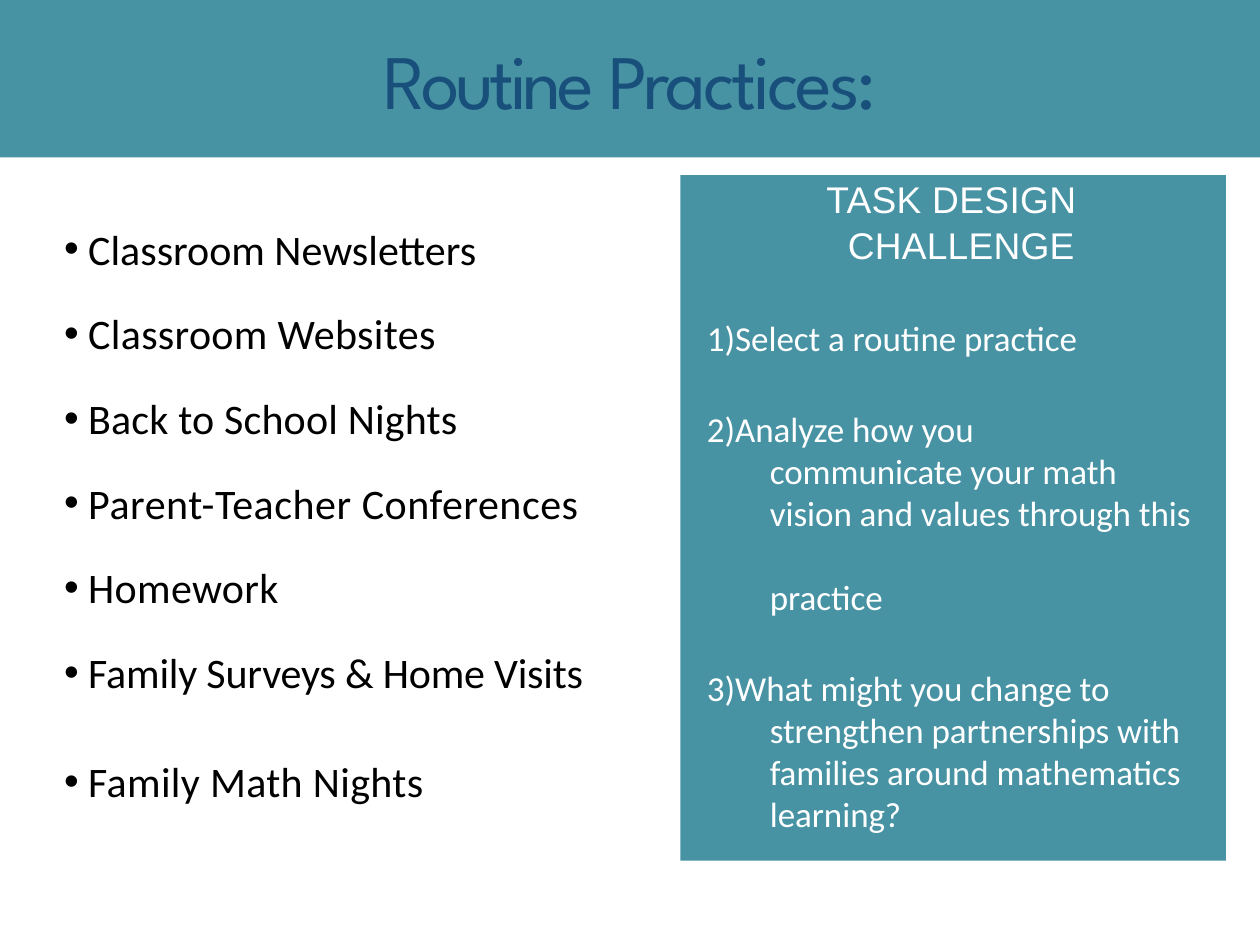
import pptx
import pptx.util
import pptx.dml.color
import pptx.enum.shapes
import pptx.enum.text
import pptx.oxml.ns
import lxml.etree

Pt = pptx.util.Pt
align = pptx.enum.text.PP_ALIGN
anchor = pptx.enum.text.MSO_ANCHOR

theme = {
    "teal": "4793A4",
    "title": {"font": "League Spartan", "size": 44, "color": "18507B"},
    "practice": {"font": "Calibri", "size": 24, "color": "000000"},
    "task": {"font": "Calibri", "size": 20, "color": "FFFFFF"},
    "heading": {"font": "Arial", "size": 21.2, "color": "FFFFFF"},
}

deck = pptx.Presentation()
deck.slide_width = pptx.util.Inches(10)
deck.slide_height = pptx.util.Inches(7.5)
column = deck.slide_width / 100
row = deck.slide_height / 75
page = deck.slides.add_slide(deck.slide_layouts[3])


def place(box, left, top, width, height, frame_format):
    lengths = {"left": left * column, "top": top * row,
               "width": width * column, "height": height * row}
    for name, value in lengths.items():
        setattr(box, name, int(value))
    for name, value in frame_format.items():
        setattr(box.text_frame, name, value)


def write(para, runs, style, para_format, indents=None, bullet=None):
    for name, value in para_format.items():
        setattr(para, name, value)
    properties = para._p.get_or_add_pPr()
    for name, columns in (indents or {}).items():
        properties.set(name, str(int(columns * column)))
    for tag, attributes in (bullet or {"buNone": {}}).items():
        lxml.etree.SubElement(properties, pptx.oxml.ns.qn("a:" + tag), attributes)
    for text, spacing in runs:
        span = para.add_run()
        span.text = text
        font_format = {"name": style["font"], "size": Pt(style["size"])}
        for name, value in font_format.items():
            setattr(span.font, name, value)
        span.font.color.rgb = pptx.dml.color.RGBColor.from_string(style["color"])
        span._r.get_or_add_rPr().set("spc", str(round(spacing * 100)))


flush = {"margin_left": 0, "margin_right": 0, "margin_top": 0, "margin_bottom": 0,
         "word_wrap": True, "vertical_anchor": anchor.TOP,
         "auto_size": pptx.enum.text.MSO_AUTO_SIZE.NONE}

title, practices, tasks = page.placeholders
panel = page.shapes.add_shape(pptx.enum.shapes.MSO_SHAPE.RECTANGLE, 0, 0, 0, 0)
panel.shadow.inherit = False
panel.line.fill.background()
page.shapes._spTree.insert(2, panel._element)
place(panel, 54, 13.9, 43.3, 54.4, {})
for box in (panel, title):
    box.fill.solid()
    box.fill.fore_color.rgb = pptx.dml.color.RGBColor.from_string(theme["teal"])

place(title, 0, 0, 100, 12.5, {"vertical_anchor": anchor.MIDDLE})
write(title.text_frame.paragraphs[0], [("Routine ", -2.6), ("Practices:", -1.9)],
      theme["title"], {"alignment": align.CENTER})

place(practices, 5, 17.5, 44.2, 49.5, flush | {"margin_top": int(0.2 * row)})
practice_items = [
    ("Classroom Newsletters", 0, 0),
    ("Classroom Websites", 0.2, 19.6),
    ("Back to School Nights", 0.1, 19.6),
    ("Parent-Teacher Conferences", 0.3, 19.6),
    ("Homework", 0.2, 19.6),
    ("Family Surveys & Home Visits", -0.1, 19.6),
    ("Family Math Nights", 0.2, 33.6),
]
for index, (text, spacing, before) in enumerate(practice_items):
    frame = practices.text_frame
    para = frame.add_paragraph() if index else frame.paragraphs[0]
    write(para, [(text, spacing)], theme["practice"],
          {"space_before": Pt(before), "line_spacing": 1.0},
          {"marL": 2, "indent": -1.9},
          {"buFont": {"typeface": "Arial"}, "buChar": {"char": "•"}})

place(tasks, 56.1, 21, 39, 42.4, flush | {"margin_top": int(4.1 * row)})
task_lines = [
    ("Select a routine practice", 1, 0),
    ("Analyze how you", 2, 28),
    ("communicate your math", None, 0),
    ("vision and values through this", None, 0),
    ("practice", None, 24),
    ("What might you change to", 3, 28),
    ("strengthen partnerships with", None, 0),
    ("families around mathematics", None, 0),
    ("learning?", None, 0),
]
for index, (text, number, before) in enumerate(task_lines):
    frame = tasks.text_frame
    para = frame.add_paragraph() if index else frame.paragraphs[0]
    indents = {"marL": 2.2, "indent": -2.2} if number else {"marL": 5, "indent": 0}
    bullet = {"buFont": {"typeface": "Calibri"},
              "buAutoNum": {"type": "arabicParenR", "startAt": str(number)}}
    write(para, [(text, -0.05)], theme["task"],
          {"space_before": Pt(before), "line_spacing": Pt(24)},
          indents, bullet if number else None)

heading = page.shapes.add_textbox(0, 0, 0, 0)
place(heading, 65.5, 13.9, 20.3, 7.1, flush)
write(heading.text_frame.paragraphs[0],
      [("TASK ", 0.1), ("DESIGN ", 0.2), ("CHALLENGE", 0.1)],
      theme["heading"], {"line_spacing": 1.03}, {"marL": 1.8, "indent": -1.7})

deck.save("out.pptx")
